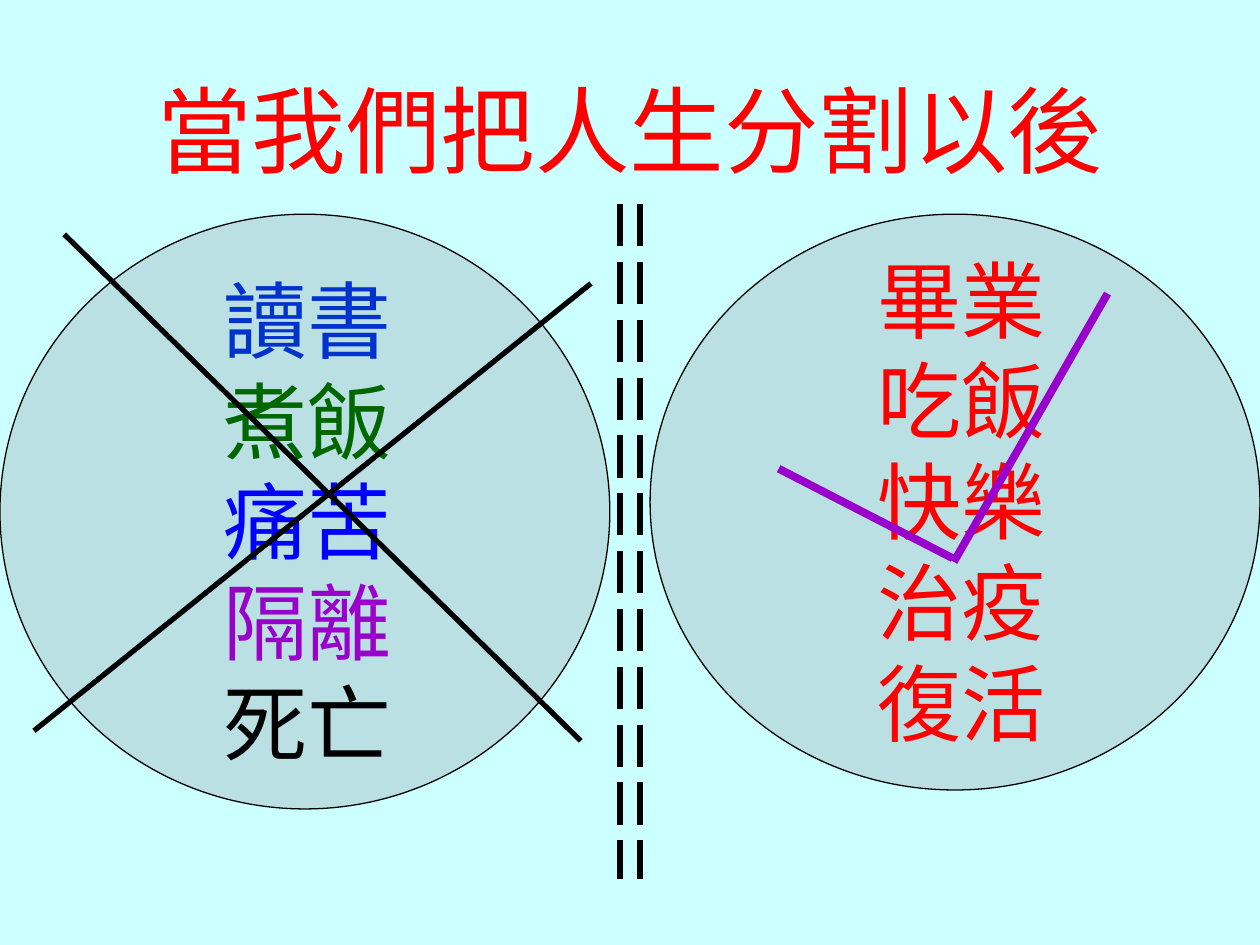
"""Build the slide on dividing life into two halves."""
import lxml.etree
import pptx
import pptx.dml.color
import pptx.enum.dml
import pptx.enum.shapes
import pptx.enum.text
import pptx.oxml.ns
import pptx.util

Inches, Pt = pptx.util.Inches, pptx.util.Pt
RGB = pptx.dml.color.RGBColor.from_string

THEME = {
    "face": "Noto Sans CJK SC",
    "background": "CCFFFF", "disc": "BBE0E3", "ink": "000000",
    "red": "FF0000", "royal": "0033CC", "green": "006600",
    "blue": "0000FF", "purple": "9900CC",
    "title_size": 54, "word_size": 48, "leading": 1.2,
    "outline": 0.75, "stroke": 3, "tick": 4.5,
}
FRAME = {
    "word_wrap": True,
    "auto_size": pptx.enum.text.MSO_AUTO_SIZE.NONE,
    "vertical_anchor": pptx.enum.text.MSO_ANCHOR.TOP,
}

TITLE = [("當我們把人生分割以後", "red")]
HARDSHIPS = [("讀書", "royal"), ("煮飯", "green"), ("痛苦", "blue"),
             ("隔離", "purple"), ("死亡", "ink")]
JOYS = [(word, "red") for word in ("畢業", "吃飯", "快樂治疫", "復活")]

DISC_WIDTH, DISC_TOP = 4.84, 1.7
DISC_HEIGHTS = {0: 4.72, 10 - DISC_WIDTH: 4.57}
TEXTS = [
    (TITLE, (0, 0, 10, 7.5), "title_size", 0.57),
    (HARDSHIPS, (1.14, 2.02, 2.6, 4.14), "word_size", 0.11),
    (JOYS, (6.65, 1.86, 1.97, 4.14), "word_size", 0.11),
]
CROSS = [(0.27, 5.8, 4.69, 2.25), (0.51, 1.86, 4.61, 5.88)]
DIVIDER = [(5 + offset, 1.62, 5 + offset, 6.98) for offset in (-0.08, 0.08)]
TICK = [(6.18, 3.72, 7.56, 4.43), (7.57, 4.46, 8.79, 2.33)]
STROKES = [
    (CROSS, "ink", "stroke", None),
    (DIVIDER, "ink", "stroke", pptx.enum.dml.MSO_LINE.LONG_DASH),
    (TICK, "purple", "tick", None),
]


def add_disc(slide, left, height):
    disc = slide.shapes.add_shape(
        pptx.enum.shapes.MSO_SHAPE.OVAL,
        *map(Inches, (left, DISC_TOP, DISC_WIDTH, height)))
    disc.shadow.inherit = False
    disc.fill.solid()
    disc.fill.fore_color.rgb = RGB(THEME["disc"])
    disc.line.color.rgb = RGB(THEME["ink"])
    disc.line.width = Pt(THEME["outline"])


def add_words(slide, words, place, size, top_inset):
    frame = slide.shapes.add_textbox(*map(Inches, place)).text_frame
    for name, value in {**FRAME, "margin_top": Inches(top_inset)}.items():
        setattr(frame, name, value)
    points = THEME[size]
    for index, (word, color) in enumerate(words):
        paragraph = frame.add_paragraph() if index else frame.paragraphs[0]
        paragraph.alignment = pptx.enum.text.PP_ALIGN.CENTER
        paragraph.line_spacing = Pt(round(points * THEME["leading"], 1))
        run = paragraph.add_run()
        run.text = word
        for name, value in {"size": Pt(points), "name": THEME["face"]}.items():
            setattr(run.font, name, value)
        run.font.color.rgb = RGB(THEME[color])
        lxml.etree.SubElement(run.font._element, pptx.oxml.ns.qn("a:ea"),
                              typeface=THEME["face"])


def add_stroke(slide, ends, color, width, dash):
    stroke = slide.shapes.add_connector(
        pptx.enum.shapes.MSO_CONNECTOR.STRAIGHT, *map(Inches, ends))
    stroke.line.color.rgb = RGB(THEME[color])
    for name, value in {"width": Pt(THEME[width]), "dash_style": dash}.items():
        setattr(stroke.line, name, value)
    lxml.etree.SubElement(stroke._element.spPr, pptx.oxml.ns.qn("a:effectLst"))


def main():
    deck = pptx.Presentation()
    deck.slide_width, deck.slide_height = Inches(10), Inches(7.5)
    slide = deck.slides.add_slide(deck.slide_layouts[6])
    slide.background.fill.solid()
    slide.background.fill.fore_color.rgb = RGB(THEME["background"])
    for left, height in DISC_HEIGHTS.items():
        add_disc(slide, left, height)
    for text in TEXTS:
        add_words(slide, *text)
    for group, *look in STROKES:
        for ends in group:
            add_stroke(slide, ends, *look)
    deck.save("out.pptx")


if __name__ == "__main__":
    main()
